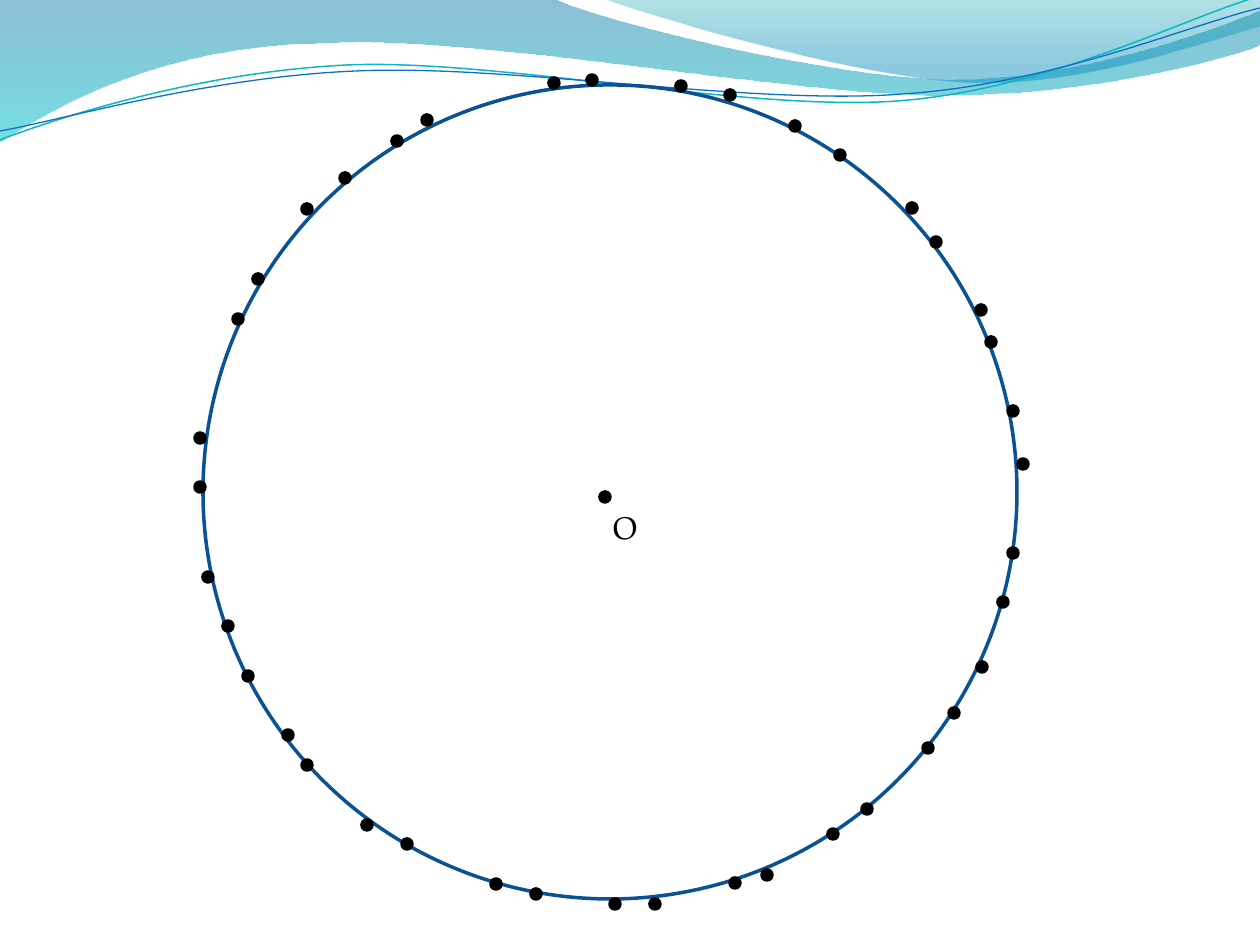
import math

from lxml import etree
from pptx import Presentation
from pptx.dml.color import RGBColor
from pptx.enum.shapes import MSO_SHAPE
from pptx.enum.text import MSO_AUTO_SIZE
from pptx.oxml.ns import qn
from pptx.util import Pt

OVAL = MSO_SHAPE.OVAL
FIT = MSO_AUTO_SIZE.SHAPE_TO_FIT_TEXT
PX = 914400 / 126
TILT = 2.7


def rgb(code):
    return RGBColor.from_string(code)


def trace(start, parts, close):
    """Draw a path whose parts hold one point for a line, three for a cubic curve."""
    ends = [start] + [part[-1] for part in parts]
    knots = [(round(x * PX), round(y * PX)) for x, y in ends]
    pen = slide.shapes.build_freeform(*knots[0])
    pen.add_line_segments(knots[1:], close=close)
    shape = pen.convert_to_shape()
    shape.shadow.inherit = False
    lines = list(shape._element.spPr.iter(qn("a:lnTo")))
    for line, part in zip(lines, parts):
        if len(part) == 3:
            curve = etree.Element(qn("a:cubicBezTo"))
            for x, y in part:
                point = etree.SubElement(curve, qn("a:pt"))
                point.set("x", str(round(x * PX) - shape.left))
                point.set("y", str(round(y * PX) - shape.top))
            line.getparent().replace(line, curve)
    return shape


deck = Presentation()
deck.slide_width = round(1260 * PX)
deck.slide_height = round(945 * PX)
slide = deck.slides.add_slide(deck.slide_layouts[6])

# Wave bands: start, parts, gradient stops (position, colour, opacity %)
bands = [
    ((0, -1),
     [[(554, -1)],
      [(600, 21), (837, 79), (955, 79)],
      [(1075, 79), (1207, 33), (1260, 11)],
      [(1261, 45)],
      [(1239, 55), (1096, 96), (940, 95)],
      [(784, 95), (481, 35), (324, 43)],
      [(163, 45), (58, 105), (-1, 142)],
      [(0, -1)]],
     [(0, "0074A1", 45), (1, "00C6CF", 55)]),
    ((604, -1),
     [[(641, 14), (859, 78), (969, 82)],
      [(1079, 87), (1211, 40), (1260, 26)],
      [(1260, 0)],
      [(604, -1)]],
     [(0, "00A1A9", 30), (0.8, "008BBF", 45)]),
]
for start, parts, stops in bands:
    band = trace(start, parts, True)
    band.line.fill.background()
    band.fill.gradient()
    band.fill.gradient_angle = 270
    for stop, (place, code, _) in zip(band.fill.gradient_stops, stops):
        stop.position = place
        stop.color.rgb = rgb(code)
    tints = band._element.spPr.iter(qn("a:srgbClr"))
    for tint, (_, _, alpha) in zip(tints, stops):
        for child in list(tint):
            tint.remove(child)
        etree.SubElement(tint, qn("a:alpha")).set("val", str(alpha * 1000))

# Thin wave lines, laid out level and then tilted about their middle
waves = [
    ((0, 140),
     [[(60, 117), (199, 72), (349, 65)],
      [(498, 59), (747, 112), (898, 101)],
      [(1050, 89), (1182, 19), (1257, -3)]],
     "0AB8BF", 0.85),
    ((0, 131),
     [[(59, 121), (207, 77), (357, 71)],
      [(508, 64), (752, 106), (903, 94)],
      [(1053, 84), (1186, 26), (1260, 8)]],
     "0F6FC6", 0.75),
]
cos, sin = math.cos(math.radians(TILT)), math.sin(math.radians(TILT))
for start, parts, code, width in waves:
    end = parts[-1][-1]
    mx, my = (start[0] + end[0]) / 2, (start[1] + end[1]) / 2
    first, *level = [
        [(mx + (x - mx) * cos - (y - my) * sin,
          my + (x - mx) * sin + (y - my) * cos) for x, y in part]
        for part in [[start], *parts]]
    wave = trace(first[0], level, False)
    wave.rotation = 360 - TILT
    wave.fill.background()
    wave.line.color.rgb = rgb(code)
    wave.line.width = Pt(width)

# Ovals: centre x, centre y, size, fill, line
dots = [
    (288, 735), (307, 765), (367, 825), (407, 844), (496, 884), (536, 894),
    (615, 904), (655, 904), (833, 834), (427, 120), (397, 141), (345, 178),
    (307, 209), (258, 279), (238, 319), (200, 438), (200, 487), (208, 577),
    (228, 626), (248, 676), (991, 342), (981, 310), (936, 242), (912, 208),
    (840, 155), (795, 126), (730, 95), (681, 86), (592, 80), (554, 83),
    (735, 883), (767, 875), (867, 809), (928, 748), (954, 713), (982, 667),
    (1003, 602), (1013, 553), (1023, 464), (1013, 411), (605, 497),
]
ovals = [(610, 492, 814, "FFFFFF", "0B5292")]
ovals += [(x, y, 10, "000000", "000000") for x, y in dots]
for x, y, size, fill, edge in ovals:
    left, top, side = (round(n * PX) for n in (x - size / 2, y - size / 2, size))
    oval = slide.shapes.add_shape(OVAL, left, top, side, side)
    oval.shadow.inherit = False
    oval.fill.solid()
    oval.fill.fore_color.rgb = rgb(fill)
    oval.line.color.rgb = rgb(edge)
    oval.line.width = Pt(2)

# Centre label
label = slide.shapes.add_textbox(*(round(n * PX) for n in (600, 502, 35, 50)))
frame = label.text_frame
frame.word_wrap = True
frame.auto_size = FIT
frame.text = "О"
font = frame.paragraphs[0].runs[0].font
font.name = "TeX Gyre Pagella"
font.size = Pt(18)
font.color.rgb = rgb("000000")

deck.save("out.pptx")
